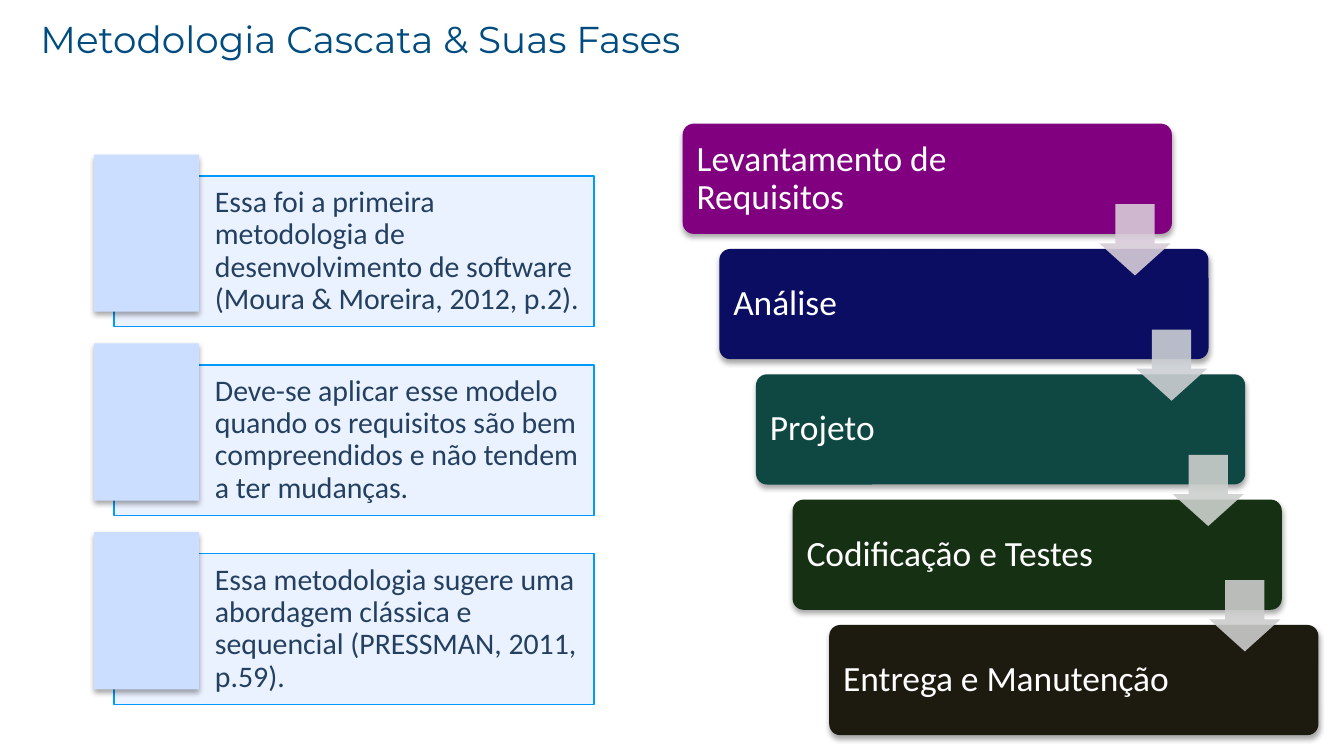
from lxml import etree
from pptx import Presentation
from pptx.dml.color import RGBColor
from pptx.enum.shapes import MSO_SHAPE
from pptx.enum.text import MSO_ANCHOR, MSO_AUTO_SIZE, PP_ALIGN
from pptx.oxml.ns import qn
from pptx.util import Inches, Pt

RECTANGLE = MSO_SHAPE.RECTANGLE
ROUNDED = MSO_SHAPE.ROUNDED_RECTANGLE
DOWN_ARROW = MSO_SHAPE.DOWN_ARROW
MIDDLE = MSO_ANCHOR.MIDDLE
LEFT = PP_ALIGN.LEFT
NO_AUTOFIT = MSO_AUTO_SIZE.NONE

TITLE_BLUE = RGBColor(0x00, 0x4C, 0x80)
PALE_BLUE = RGBColor(0xCC, 0xDE, 0xFF)
BORDER_BLUE = RGBColor(0x00, 0x99, 0xFF)
NAVY_TEXT = RGBColor(0x24, 0x40, 0x61)
WHITE = RGBColor(0xFF, 0xFF, 0xFF)
BLACK = RGBColor(0x00, 0x00, 0x00)

NOTES = [
    "Essa foi a primeira metodologia de desenvolvimento de software (Moura & Moreira, 2012, p.2).",
    "Deve-se aplicar esse modelo quando os requisitos são bem compreendidos e não tendem a ter mudanças.",
    "Essa metodologia sugere uma abordagem clássica e sequencial (PRESSMAN, 2011, p.59).",
]
PHASES = [
    ("Levantamento de Requisitos", RGBColor(0x80, 0x00, 0x80)),
    ("Análise", RGBColor(0x0A, 0x0D, 0x62)),
    ("Projeto", RGBColor(0x0F, 0x47, 0x43)),
    ("Codificação e Testes", RGBColor(0x15, 0x30, 0x12)),
    ("Entrega e Manutenção", RGBColor(0x1D, 0x1B, 0x10)),
]
ARROW_COLORS = [
    RGBColor(0xD8, 0xCC, 0xD8),
    RGBColor(0xCC, 0xCF, 0xD4),
    RGBColor(0xCC, 0xD0, 0xCD),
    RGBColor(0xCC, 0xCC, 0xCC),
]

# Widescreen page, 16:9
deck = Presentation()
deck.slide_width, deck.slide_height = Inches(10), Inches(10 * 9 / 16)
page = deck.slides.add_slide(deck.slide_layouts[5])


def add_box(kind, place, color, opacity=100, shadow=False, adjustments=()):
    box = page.shapes.add_shape(kind, *[Inches(length) for length in place])
    box.shadow.inherit = False
    box.fill.solid()
    box.fill.fore_color.rgb = color
    box.line.fill.background()
    for index, value in enumerate(adjustments):
        box.adjustments[index] = value
    properties = box._element.spPr
    if opacity < 100:
        tint = properties.find(qn("a:solidFill"))[0]
        etree.SubElement(tint, qn("a:alpha"), val=str(opacity * 1000))
    if shadow:
        effects = properties.find(qn("a:effectLst"))
        outer = etree.SubElement(effects, qn("a:outerShdw"), blurRad=str(Pt(3.1)),
                                 dist=str(Pt(1.8)), dir="5400000", rotWithShape="0")
        tint = etree.SubElement(outer, qn("a:srgbClr"), val=str(BLACK))
        etree.SubElement(tint, qn("a:alpha"), val="35000")
    return box


def set_text(box, text, font_format, margins=None, line_spacing=None):
    frame = box.text_frame
    frame.word_wrap = True
    frame.auto_size = NO_AUTOFIT
    frame.vertical_anchor = MIDDLE
    for side, length in (margins or {}).items():
        setattr(frame, "margin_" + side, Inches(length))
    para = frame.paragraphs[0]
    para.alignment = LEFT
    para.line_spacing = line_spacing
    span = para.add_run()
    span.text = text
    span.font.color.rgb = font_format["color"]
    for name in ("name", "size"):
        setattr(span.font, name, font_format[name])


# Title
title = page.shapes.title
title.left, title.top = Inches(0.2), Inches(0.11)
title.width, title.height = Inches(8.27), Inches(0.35)
set_text(title, "Metodologia Cascata & Suas Fases",
         {"name": "Montserrat", "size": Pt(20), "color": TITLE_BLUE})

# Notes on the left, each with a square overlapping its corner
FIRST_NOTE, LAST_NOTE = 1.31, 4.12
note_gap = (LAST_NOTE - FIRST_NOTE) / (len(NOTES) - 1)
note_font = {"name": "Calibri", "size": Pt(16), "color": NAVY_TEXT}
note_margins = {"left": 0.75, "top": 0.07, "right": 0.07, "bottom": 0.07}
for row, note in enumerate(NOTES):
    top = FIRST_NOTE + note_gap * row
    panel = add_box(RECTANGLE, (0.85, top, 3.57, 1.12), PALE_BLUE, opacity=40)
    panel.line.color.rgb = BORDER_BLUE
    panel.line.width = Pt(0.75)
    set_text(panel, note, note_font, note_margins, 0.9)
    add_box(RECTANGLE, (0.7, top - 0.16, 0.78, 1.17), PALE_BLUE, shadow=True)

# Staircase of phases, from the first corner to the last
FIRST_X, FIRST_Y, LAST_X, LAST_Y = 5.08, 0.92, 6.17, 4.65
step_x = (LAST_X - FIRST_X) / (len(PHASES) - 1)
step_y = (LAST_Y - FIRST_Y) / (len(PHASES) - 1)
phase_font = {"name": "Calibri", "size": Pt(19), "color": WHITE}
phase_margins = {"left": 0.08, "top": 0.1, "right": 1.04, "bottom": 0.1}
for step, (phase, color) in enumerate(PHASES):
    place = (FIRST_X + step_x * step, FIRST_Y + step_y * step, 3.64, 0.82)
    bar = add_box(ROUNDED, place, color, shadow=True, adjustments=(0.1,))
    set_text(bar, phase, phase_font, phase_margins, 0.9)

# Arrows between phases
for step, color in enumerate(ARROW_COLORS):
    place = (8.18 + step_x * step, 1.52 + step_y * step, 0.53, 0.53)
    # Adjustments are the shaft width and the head length
    add_box(DOWN_ARROW, place, color, opacity=90, adjustments=(0.55, 0.45))

deck.save("out.pptx")
